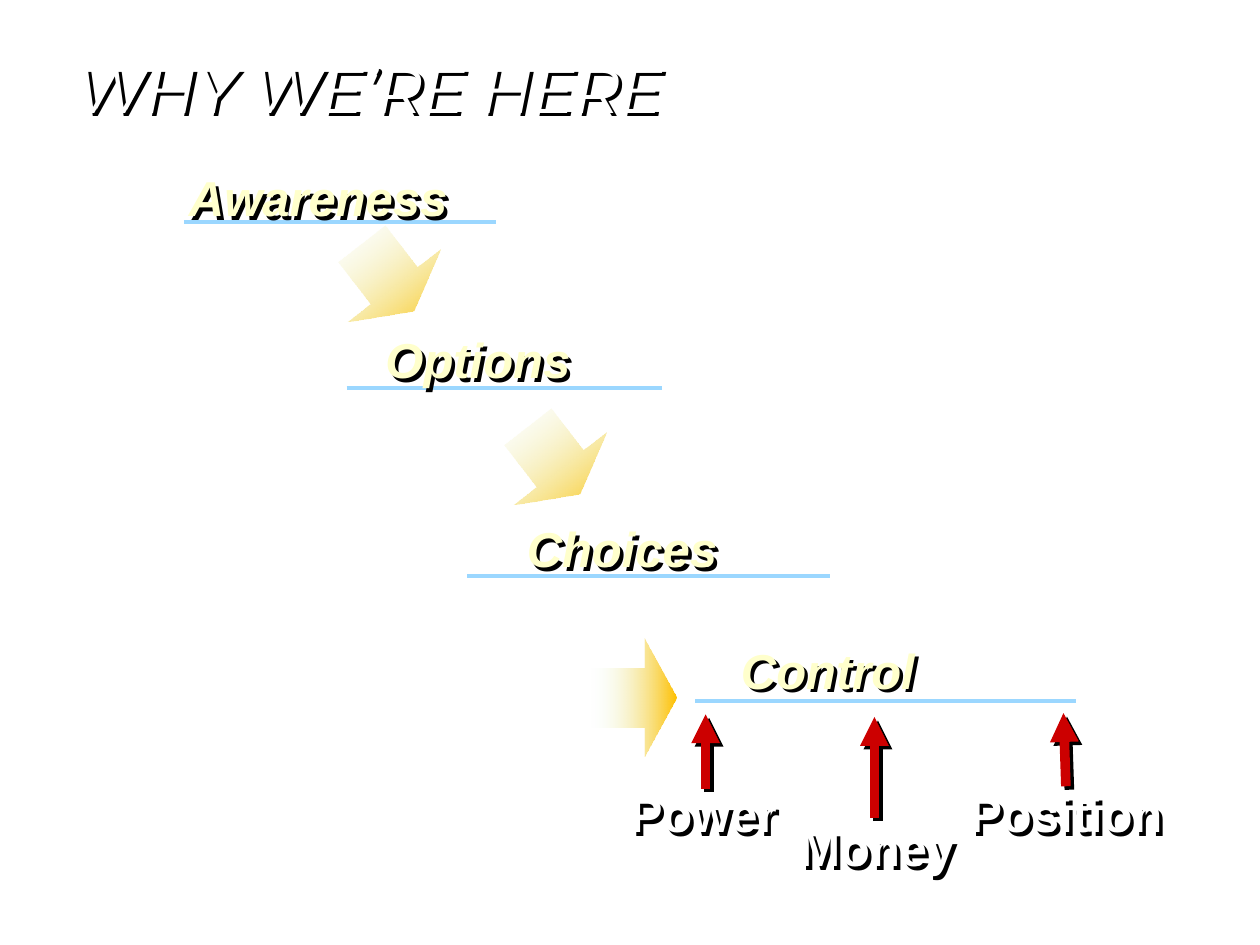
from lxml import etree
from pptx import Presentation
from pptx import util as u
from pptx.dml.color import RGBColor
from pptx.enum import shapes, text
from pptx.oxml.ns import qn

SKY = RGBColor(0x9B, 0xD7, 0xFF)
CREAM = RGBColor(0xFF, 0xFF, 0xCC)
WHITE = RGBColor(0xFF, 0xFF, 0xFF)
RED = RGBColor(0xCC, 0x00, 0x00)
GOLD = RGBColor(0xFF, 0xC0, 0x00)
MINT = RGBColor(0xE7, 0xFF, 0xF3)
BLACK = RGBColor(0x00, 0x00, 0x00)

STEPS = [
    ("Awareness", (108, 95.8, 213.8), (105.1, 283.7, 126.7)),
    ("Options", (220.3, 188.6, 139), (198, 378, 221.8)),
    ("Choices", (301, 296.6, 137.5), (267.1, 474.5, 329)),
    ("Control", (423.4, 365.8, 213.8), (397.4, 614.9, 400.5)),
]
SOURCES = [
    ("Power", (344.9, 447.8, 113.8), (403.2, 450.7, 403.2, 408.2)),
    ("Money", (452.9, 467.3, 96.5), (499.7, 467.3, 499.7, 409.7)),
    ("Position", (536.4, 447.8, 145.4), (609.1, 449.3, 607.7, 407.5)),
]
BLOCK_ARROWS = [(197.3, 124.4, 52.1), (292.3, 229, 52.1), (338.2, 364.8, 0)]


def add_shadow(shape):
    effects = etree.SubElement(shape._element.spPr, qn("a:effectLst"))
    shadow = etree.SubElement(effects, qn("a:outerShdw"), dist=str(u.Pt(2.8)),
                              dir="2700000", algn="ctr", rotWithShape="0")
    etree.SubElement(shadow, qn("a:srgbClr"), val=str(BLACK))


def format_run(run, font_name, size, color, bold, italic):
    font = run.font
    font.name, font.size = font_name, u.Pt(size)
    font.bold, font.italic = bold, italic
    font.color.rgb = color


def add_title(slide, wording):
    title = slide.shapes.title
    title.left, title.top = u.Pt(36), u.Pt(21.6)
    title.width, title.height = u.Pt(648), u.Pt(57.6)
    title.fill.background()
    add_shadow(title)
    frame = title.text_frame
    frame.text = wording
    frame.vertical_anchor = text.MSO_ANCHOR.MIDDLE
    paragraph = frame.paragraphs[0]
    paragraph.alignment = text.PP_ALIGN.LEFT
    format_run(paragraph.runs[0], "Montserrat", 36, WHITE, False, True)


def add_label(slide, wording, place, color, italic, alignment):
    left, top, width = place
    box = slide.shapes.add_textbox(u.Pt(left), u.Pt(top), u.Pt(width), u.Pt(33.8))
    add_shadow(box)
    frame = box.text_frame
    frame.word_wrap = True
    frame.auto_size = text.MSO_AUTO_SIZE.SHAPE_TO_FIT_TEXT
    frame.margin_left = frame.margin_right = 0
    frame.margin_top = frame.margin_bottom = 0
    frame.text = wording
    paragraph = frame.paragraphs[0]
    paragraph.alignment = alignment
    format_run(paragraph.runs[0], "Arial", 28, color, True, italic)


def add_line(slide, ends, color, width):
    connector = slide.shapes.add_connector(
        shapes.MSO_CONNECTOR.STRAIGHT, *(u.Pt(value) for value in ends))
    connector.line.color.rgb = color
    connector.line.width = u.Pt(width)
    return connector


def add_underline(slide, left, right, y):
    connector = add_line(slide, (left, y, right, y), SKY, 2.25)
    etree.SubElement(connector._element.spPr, qn("a:effectLst"))


def add_pointer(slide, ends):
    connector = add_line(slide, ends, RED, 5.5)
    etree.SubElement(connector.line._get_or_add_ln(), qn("a:tailEnd"), type="triangle")
    add_shadow(connector)


def add_block_arrow(slide, left, top, rotation):
    arrow = slide.shapes.add_shape(shapes.MSO_SHAPE.RIGHT_ARROW, u.Pt(left),
                                   u.Pt(top), u.Pt(48.2), u.Pt(67.7))
    arrow.adjustments[0], arrow.adjustments[1] = 0.5, 0.38
    arrow.rotation = rotation
    arrow.shadow.inherit = False
    arrow.line.fill.background()
    arrow.fill.gradient()
    arrow.fill.gradient_angle = 180
    start, end = arrow.fill.gradient_stops
    start.color.rgb, end.color.rgb = GOLD, MINT
    end_color = arrow._element.spPr.findall(".//" + qn("a:srgbClr"))[-1]
    etree.SubElement(end_color, qn("a:alpha"), val="0")


def main():
    presentation = Presentation()
    presentation.slide_width, presentation.slide_height = u.Pt(720), u.Pt(540)
    slide = presentation.slides.add_slide(presentation.slide_layouts[5])
    add_title(slide, "WHY WE’RE HERE")
    for wording, place, underline in STEPS:
        add_underline(slide, *underline)
        add_label(slide, wording, place, CREAM, True, text.PP_ALIGN.LEFT)
    for wording, place, pointer in SOURCES:
        add_pointer(slide, pointer)
        add_label(slide, wording, place, WHITE, False, text.PP_ALIGN.CENTER)
    for block_arrow in BLOCK_ARROWS:
        add_block_arrow(slide, *block_arrow)
    presentation.save("out.pptx")


if __name__ == "__main__":
    main()
